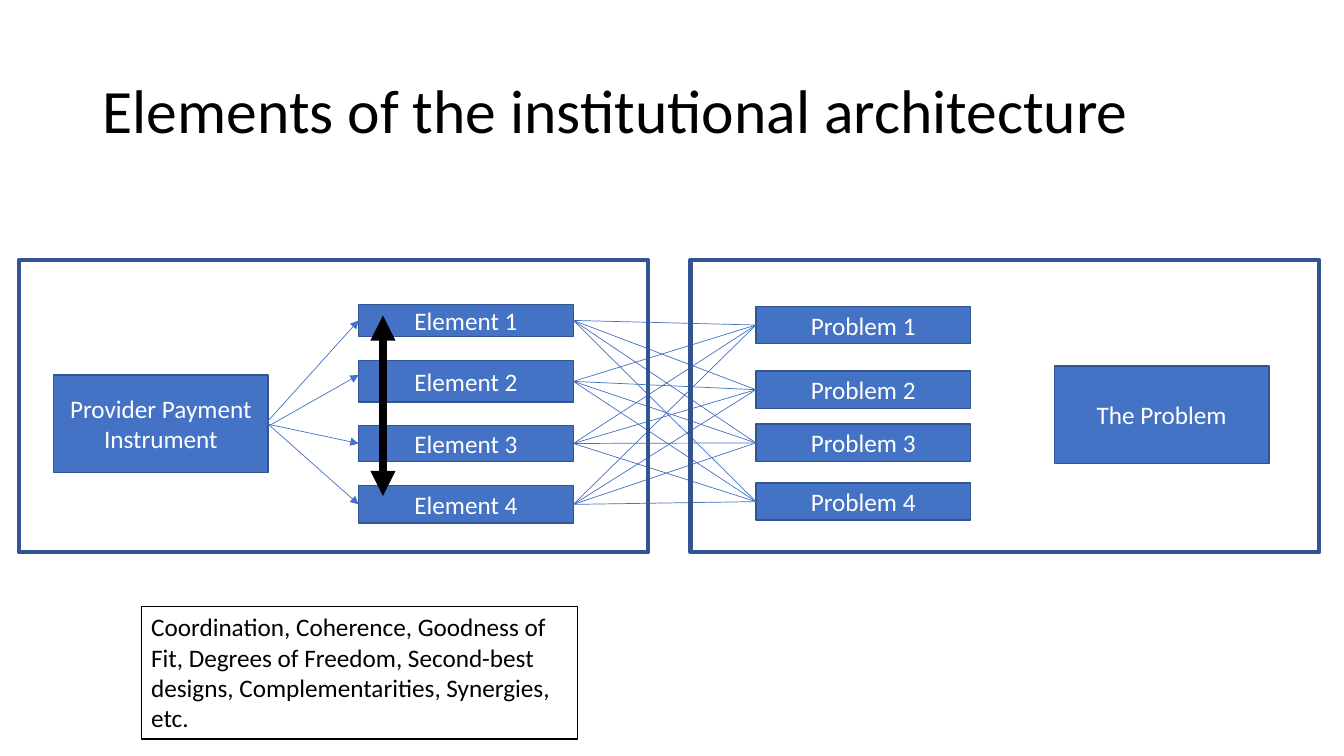
from lxml import etree
from pptx import Presentation
from pptx.dml.color import RGBColor
from pptx.enum.shapes import MSO_CONNECTOR, MSO_SHAPE
from pptx.enum.text import MSO_ANCHOR, PP_ALIGN
from pptx.oxml.ns import qn
from pptx.util import Cm, Pt

RECTANGLE = MSO_SHAPE.RECTANGLE
STRAIGHT = MSO_CONNECTOR.STRAIGHT
MIDDLE, TOP = MSO_ANCHOR.MIDDLE, MSO_ANCHOR.TOP
LEFT, CENTER = PP_ALIGN.LEFT, PP_ALIGN.CENTER
BLUE, NAVY, BLACK, WHITE = "4472C4", "325491", "000000", "FFFFFF"
BOX_WIDTH = 5.41
ELEMENT_LEFT, PROBLEM_LEFT = 9.04, 19.05

deck = Presentation()
deck.slide_width, deck.slide_height = Cm(33.87), Cm(19.05)
page = deck.slides.add_slide(deck.slide_layouts[6])


def add_box(place, text="", fill=BLUE, line=NAVY, weight=1, color=WHITE,
            size=18, align=CENTER, anchor=MIDDLE):
    box = page.shapes.add_shape(RECTANGLE, *[Cm(length) for length in place])
    box.shadow.inherit = False
    if fill:
        box.fill.solid()
        box.fill.fore_color.rgb = RGBColor.from_string(fill)
    else:
        box.fill.background()
    if line:
        box.line.color.rgb = RGBColor.from_string(line)
        box.line.width = Pt(weight)
    else:
        box.line.fill.background()
    frame = box.text_frame
    frame.word_wrap = True
    frame.vertical_anchor = anchor
    frame.text = text
    para = frame.paragraphs[0]
    para.alignment = align
    for span in para.runs:
        span.font.name = "Calibri"
        span.font.size = Pt(size)
        span.font.color.rgb = RGBColor.from_string(color)
    return box


def add_line(start, end, color=BLUE, weight=0.5, arrowheads=()):
    link = page.shapes.add_connector(STRAIGHT, *[Cm(length) for length in start + end])
    link.line.color.rgb = RGBColor.from_string(color)
    link.line.width = Pt(weight)
    for arrowhead in arrowheads:
        etree.SubElement(link.line._get_or_add_ln(), qn(arrowhead)).set("type", "triangle")
    etree.SubElement(link._element.spPr, qn("a:effectLst"))


title = add_box((2.34, 1.02, 29.21, 3.68), "Elements of the institutional architecture",
                fill=None, line=None, color=BLACK, size=44, align=LEFT)
title.text_frame.paragraphs[0].line_spacing = 0.9

add_box((1.35, 9.45, BOX_WIDTH, 2.46), "Provider Payment Instrument")
add_box((26.57, 9.22, BOX_WIDTH, 2.46), "The Problem")

element_rows = [(7.67, 0.81), (9.09, 1.04), (10.72, 0.91), (12.24, 0.94)]
problem_rows = [(top, 0.94) for top in (7.72, 9.35, 10.69, 12.17)]
for label, left, rows in (("Element", ELEMENT_LEFT, element_rows),
                          ("Problem", PROBLEM_LEFT, problem_rows)):
    for number, (top, height) in enumerate(rows, 1):
        add_box((left, top, BOX_WIDTH, height), f"{label} {number}")

element_middles = [top + height / 2 for top, height in element_rows]
problem_middles = [top + height / 2 for top, height in problem_rows]
for problem_middle in problem_middles:
    for element_middle in element_middles:
        add_line((ELEMENT_LEFT + BOX_WIDTH, element_middle), (PROBLEM_LEFT, problem_middle))

add_line((9.65, 7.95), (9.65, 12.5), BLACK, 6, ("a:headEnd", "a:tailEnd"))

instrument_starts = [(6.68, 10.69), (6.76, 10.74), (6.76, 10.69), (6.76, 10.69)]
arrow_ends = [element_middles[0], 9.45, *element_middles[2:]]
for start, arrow_end in zip(instrument_starts, arrow_ends):
    add_line(start, (ELEMENT_LEFT, arrow_end), arrowheads=("a:tailEnd",))

add_box((3.56, 15.29, 11, 3.33),
        "Coordination, Coherence, Goodness of Fit, Degrees of Freedom, Second-best "
        "designs, Complementarities, Synergies, etc.",
        fill=WHITE, line=BLACK, color=BLACK, align=LEFT, anchor=TOP)

for frame_left in (0.48, 17.4):
    add_box((frame_left, 6.55, 15.85, 7.37), fill=None, weight=3)

deck.save("out.pptx")
